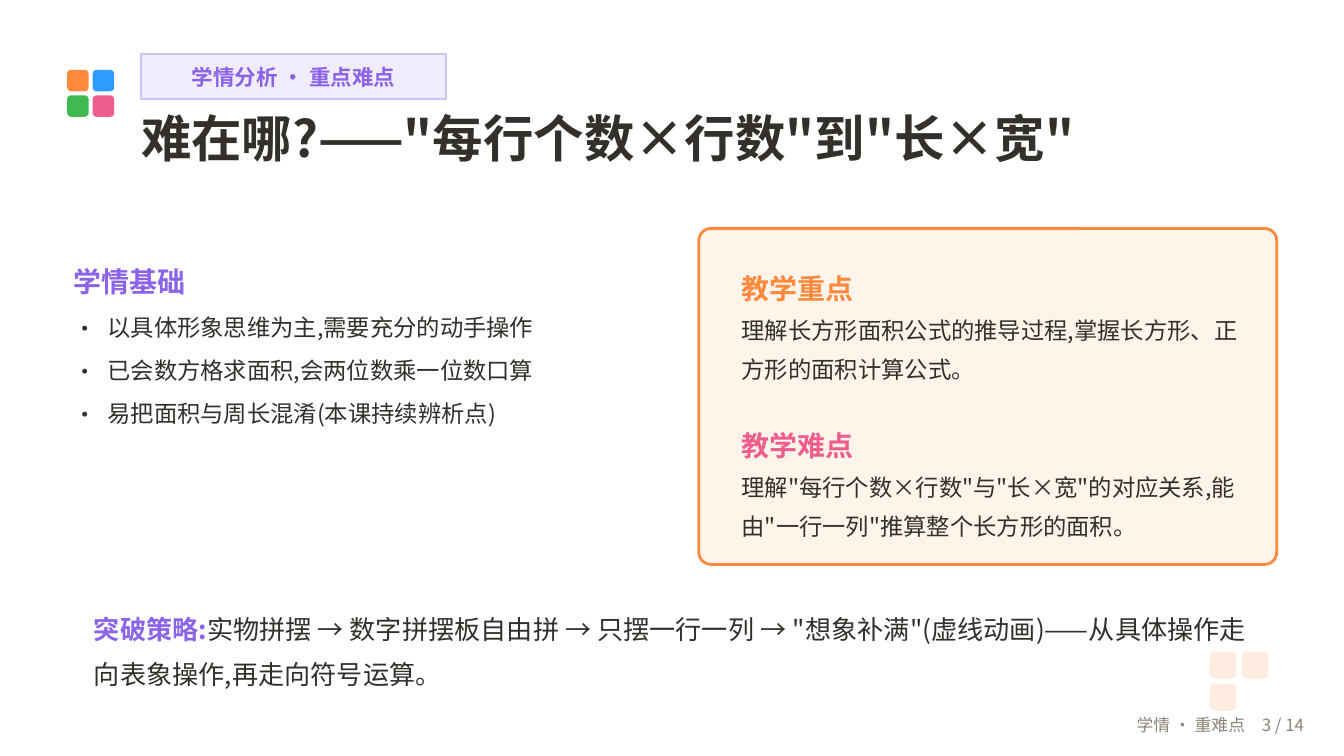
from lxml import etree
from pptx import Presentation
from pptx.dml.color import RGBColor
from pptx.enum import shapes, text
from pptx.oxml import ns
from pptx.util import Pt

FONT = "Noto Sans CJK SC"
INK = RGBColor(0x33, 0x30, 0x2B)
GREY = RGBColor(0x8A, 0x84, 0x78)
PURPLE = RGBColor(0x8A, 0x63, 0xE8)
LILAC = RGBColor(0xF1, 0xEC, 0xFC)
LILAC_EDGE = RGBColor(0xD0, 0xC1, 0xF6)
ORANGE = RGBColor(0xFF, 0x8A, 0x3D)
CREAM = RGBColor(0xFF, 0xF4, 0xEA)
PEACH = RGBColor(0xFF, 0xEC, 0xE0)
BLUE = RGBColor(0x2F, 0x9B, 0xFF)
GREEN = RGBColor(0x3F, 0xB9, 0x50)
PINK = RGBColor(0xEF, 0x5D, 0x8F)

RECT = shapes.MSO_SHAPE.RECTANGLE
ROUNDED = shapes.MSO_SHAPE.ROUNDED_RECTANGLE
TOP, MIDDLE = text.MSO_ANCHOR.TOP, text.MSO_ANCHOR.MIDDLE
CENTER, RIGHT = text.PP_ALIGN.CENTER, text.PP_ALIGN.RIGHT


def add_panel(slide, kind, box, fill, edge=None, edge_width=1, corner=None):
    panel = slide.shapes.add_shape(kind, *map(Pt, box))
    panel.shadow.inherit = False
    panel.fill.solid()
    panel.fill.fore_color.rgb = fill
    if edge is None:
        panel.line.fill.background()
    else:
        panel.line.color.rgb = edge
        panel.line.width = Pt(edge_width)
    if corner is not None:
        panel.adjustments[0] = corner
    return panel


def add_tiles(slide, left, top, side, step, corner, colors):
    """Lay small rounded squares out in rows of two."""
    for i, color in enumerate(colors):
        row, column = divmod(i, 2)
        box = (left + column * step, top + row * step, side, side)
        add_panel(slide, ROUNDED, box, color, corner=corner)


def set_up_frame(frame, anchor, inset):
    frame.word_wrap = True
    frame.vertical_anchor = anchor
    if not inset:
        frame.margin_left = frame.margin_right = 0
        frame.margin_top = frame.margin_bottom = 0


def add_text_frame(slide, box, anchor=TOP, inset=True):
    frame = slide.shapes.add_textbox(*map(Pt, box)).text_frame
    set_up_frame(frame, anchor, inset)
    return frame


def style_run(run, size, color, bold=False):
    run.font.size = Pt(size)
    run.font.bold = bold
    run.font.color.rgb = color
    run.font.name = FONT
    east_asian = etree.SubElement(run.font._element, ns.qn("a:ea"))
    east_asian.set("typeface", FONT)


def write(paragraph, words, size, color, bold=False, line=None, align=None):
    paragraph.text = words
    if line:
        paragraph.line_spacing = Pt(line)
    if align is not None:
        paragraph.alignment = align
    for run in paragraph.runs:
        style_run(run, size, color, bold)


def add_bullet(paragraph, indent):
    properties = paragraph._p.get_or_add_pPr()
    properties.set("marL", str(Pt(indent)))
    properties.set("indent", str(-Pt(indent)))
    etree.SubElement(properties, ns.qn("a:buFont")).set("typeface", FONT)
    etree.SubElement(properties, ns.qn("a:buChar")).set("char", "·")


def add_heading(slide):
    add_tiles(slide, 36, 37.44, 11.52, 13.68, 0.18, [ORANGE, BLUE, GREEN, PINK])
    badge = add_panel(slide, RECT, (75.6, 28.8, 163.44, 24.48), LILAC, LILAC_EDGE)
    set_up_frame(badge.text_frame, MIDDLE, inset=False)
    write(badge.text_frame.paragraphs[0], "学情分析 · 重点难点", 11.5, PURPLE, True,
          align=CENTER)
    title = add_text_frame(slide, (75.6, 57.6, 604.8, 39.6), inset=False)
    write(title.paragraphs[0], '难在哪?——"每行个数×行数"到"长×宽"', 27, INK, True)


def add_learner_basis(slide):
    basis = add_text_frame(slide, (39.6, 136.8, 324, 129.6), inset=False)
    write(basis.paragraphs[0], "学情基础", 15, PURPLE, True, line=23)
    for point in ("以具体形象思维为主,需要充分的动手操作",
                  "已会数方格求面积,会两位数乘一位数口算",
                  "易把面积与周长混淆(本课持续辨析点)"):
        paragraph = basis.add_paragraph()
        add_bullet(paragraph, 18)
        write(paragraph, point, 12.5, INK, line=23)


def add_key_points(slide):
    line = 21
    add_panel(slide, ROUNDED, (374.4, 122.4, 309.6, 180), CREAM, ORANGE, 1.5, 0.036)
    points = add_text_frame(slide, (390.24, 136.8, 282.24, 158.4), MIDDLE)
    focus, focus_body = points.paragraphs[0], points.add_paragraph()
    difficulty, difficulty_body = points.add_paragraph(), points.add_paragraph()
    write(focus, "教学重点", 15, ORANGE, True, line)
    write(focus_body, "理解长方形面积公式的推导过程,掌握长方形、正方形的面积计算公式。",
          12.5, INK, line=line)
    write(difficulty, "教学难点", 15, PINK, True, line)
    difficulty.space_before = Pt(line)
    write(difficulty_body,
          '理解"每行个数×行数"与"长×宽"的对应关系,能由"一行一列"推算整个长方形的面积。',
          12.5, INK, line=line)


def add_strategy(slide):
    strategy = add_text_frame(slide, (43.2, 320.4, 637.2, 50.4), MIDDLE).paragraphs[0]
    write(strategy, "突破策略:", 14, PURPLE, True, line=24)
    steps = strategy.add_run()
    steps.text = ('实物拼摆 → 数字拼摆板自由拼 → 只摆一行一列 → "想象补满"(虚线动画)'
                  '——从具体操作走向表象操作,再走向符号运算。')
    style_run(steps, 14, INK)


def add_footer(slide):
    footer = add_text_frame(slide, (576, 377.28, 129.6, 21.6), MIDDLE)
    write(footer.paragraphs[0], "学情 · 重难点　3 / 14", 9, GREY, align=RIGHT)


def main():
    deck = Presentation()
    deck.slide_width, deck.slide_height = Pt(720), Pt(405)
    slide = deck.slides.add_slide(deck.slide_layouts[6])
    add_tiles(slide, 648, 349.2, 14.4, 17.28, 0.2, [PEACH] * 3)
    add_heading(slide)
    add_learner_basis(slide)
    add_key_points(slide)
    add_strategy(slide)
    add_footer(slide)
    deck.save("out.pptx")


if __name__ == "__main__":
    main()
